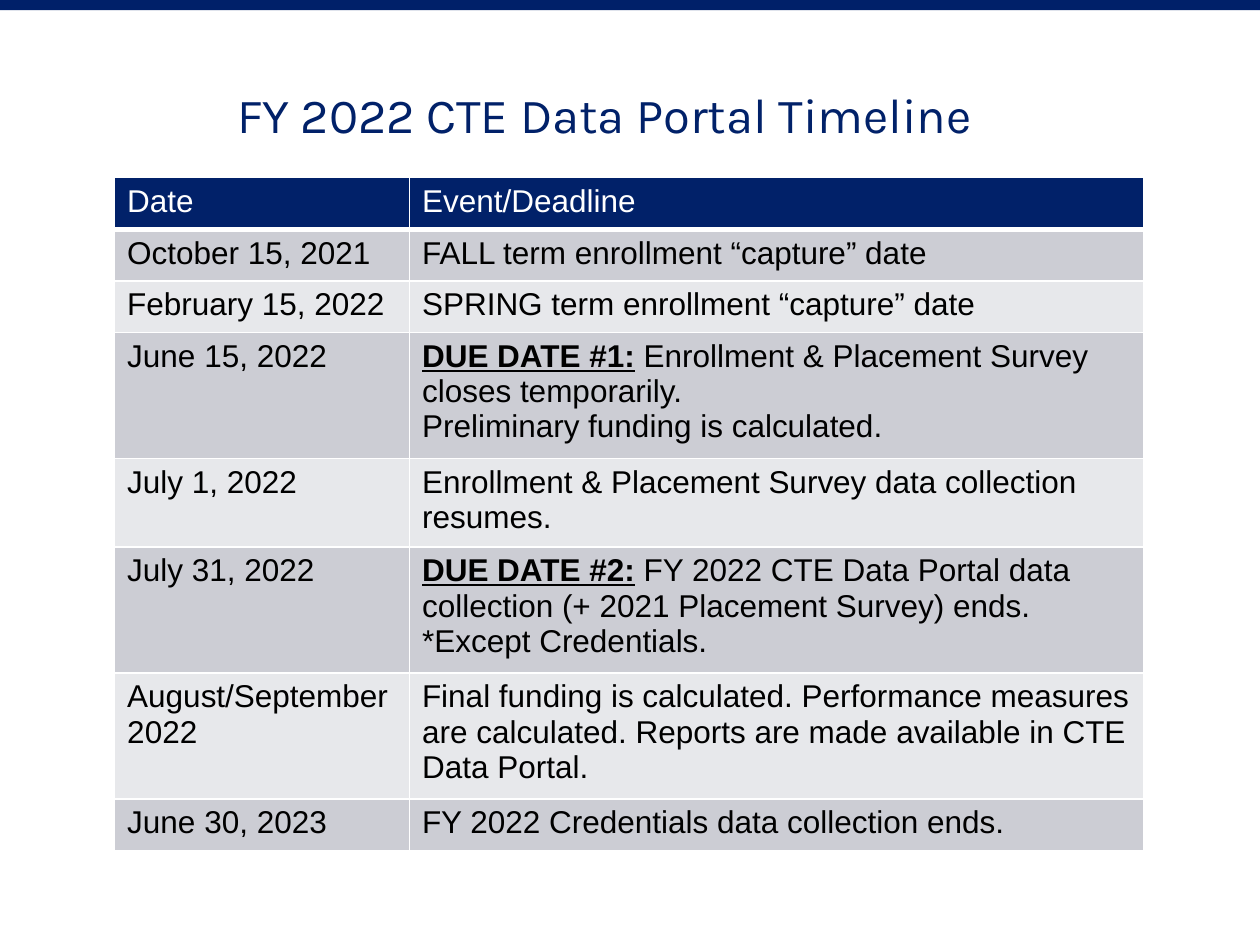
from lxml import etree
from pptx import Presentation
from pptx.dml.color import RGBColor
from pptx.enum.shapes import MSO_SHAPE
from pptx.enum.text import PP_ALIGN
from pptx.oxml.ns import qn
from pptx.util import Inches, Pt

RECT = MSO_SHAPE.RECTANGLE
CENTER = PP_ALIGN.CENTER
COLORS = {"bar": "002069", "navy": "012169", "white": "FFFFFF",
          "black": "000000", "dark": "CCCDD4", "light": "E7E8EB"}


def add_run(p, text, font="Arial", size=18, color="black", bold=False, underline=False):
    r = p.add_run()
    r.text = text
    r.font.name = font
    r.font.size = Pt(size)
    r.font.bold = bold
    r.font.underline = underline
    r.font.color.rgb = RGBColor.from_string(COLORS[color])


def add_border(cell, side, width):
    ln = etree.Element(qn(f"a:{side}"), w=str(Pt(width)))
    fill = etree.SubElement(ln, qn("a:solidFill"))
    etree.SubElement(fill, qn("a:srgbClr"), val=COLORS["white"])
    return ln


prs = Presentation()
prs.slide_width, prs.slide_height = Inches(10), Inches(7.5)
s = prs.slides.add_slide(prs.slide_layouts[6])

bar = s.shapes.add_shape(RECT, 0, 0, prs.slide_width, Inches(0.08))
bar.shadow.inherit = False
bar.fill.solid()
bar.fill.fore_color.rgb = RGBColor.from_string(COLORS["bar"])
bar.line.fill.background()

title = s.shapes.add_textbox(Inches(0.92), Inches(0.67), Inches(7.75), Inches(0.47))
tf = title.text_frame
tf.word_wrap = True
tf.margin_left = tf.margin_right = tf.margin_top = tf.margin_bottom = 0
p = tf.paragraphs[0]
p.alignment = CENTER
add_run(p, "FY 2022 CTE Data Portal Timeline", font="Karla", size=28, color="navy")

timeline = [
    ("Date", "", ["Event/Deadline"]),
    ("October 15, 2021", "", ["FALL term enrollment “capture” date"]),
    ("February 15, 2022", "", ["SPRING term enrollment “capture” date"]),
    ("June 15, 2022", "DUE DATE #1:",
     ["Enrollment & Placement Survey closes temporarily.",
      "Preliminary funding is calculated."]),
    ("July 1, 2022", "", ["Enrollment & Placement Survey data collection resumes."]),
    ("July 31, 2022", "DUE DATE #2:",
     ["FY 2022 CTE Data Portal data collection (+ 2021 Placement Survey) ends. "
      "*Except Credentials."]),
    ("August/September 2022", "",
     ["Final funding is calculated. Performance measures are calculated. "
      "Reports are made available in CTE Data Portal."]),
    ("June 30, 2023", "", ["FY 2022 Credentials data collection ends."]),
]
col_widths = [2.34, 5.83]
row_height = 0.41

table = s.shapes.add_table(len(timeline), len(col_widths), Inches(0.91), Inches(1.41),
                           Inches(sum(col_widths)),
                           Inches(row_height * len(timeline))).table
for column, width in zip(table.columns, col_widths):
    column.width = Inches(width)

for i, (date, due, lines) in enumerate(timeline):
    table.rows[i].height = Inches(row_height)
    band = "navy" if i == 0 else ("light", "dark")[i % 2]
    color = "white" if i == 0 else "black"
    for j, paragraphs in enumerate(([date], lines)):
        cell = table.cell(i, j)
        tf = cell.text_frame
        for k, text in enumerate(paragraphs):
            p = tf.add_paragraph() if k else tf.paragraphs[0]
            if j == 1 and k == 0 and due:
                add_run(p, due, bold=True, underline=True)
                add_run(p, " ", bold=True)
            add_run(p, text, color=color)
        cell.fill.solid()
        cell.fill.fore_color.rgb = RGBColor.from_string(COLORS[band])
        widths = {"lnL": 1, "lnR": 1, "lnT": 3 if i == 1 else 1, "lnB": 3 if i == 0 else 1}
        tcPr = cell._tc.get_or_add_tcPr()
        for n, (side, width) in enumerate(widths.items()):
            tcPr.insert(n, add_border(cell, side, width))

prs.save("out.pptx")
